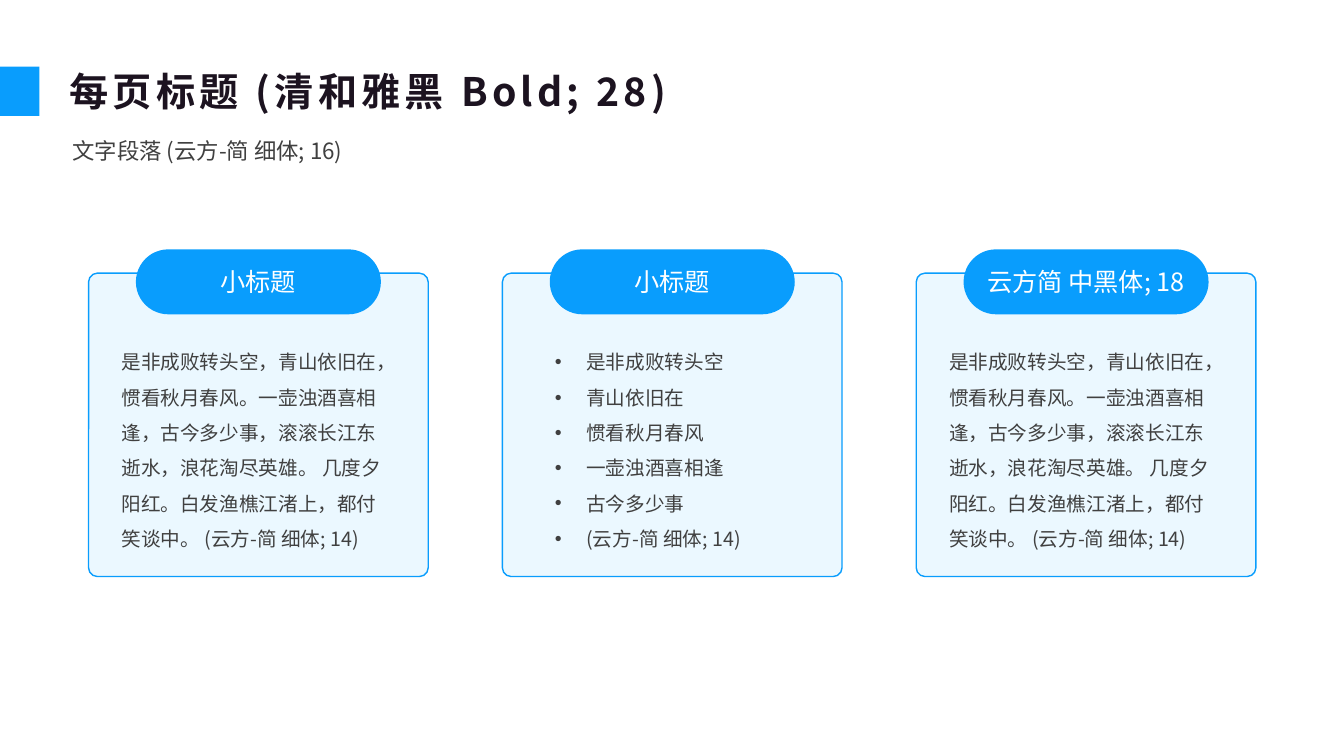
from pptx import Presentation
from pptx.dml.color import RGBColor
from pptx.enum import shapes, text
from pptx.oxml import ns
from pptx.util import Pt
from lxml import etree

COLORS = {"accent": "099DFD", "panel": "D9F3FF", "title": "1C1320",
          "body": "404040", "white": "FFFFFF"}
FONT = "Noto Sans CJK SC"
BODY_INSET = 3.6
BULLET_INDENT = 22.5

POEM = ("是非成败转头空，青山依旧在，惯看秋月春风。一壶浊酒喜相逢，古今多少事，"
        "滚滚长江东逝水，浪花淘尽英雄。 几度夕阳红。白发渔樵江渚上，都付笑谈中。 "
        "(云方-简 细体; 14)")
VERSES = ["是非成败转头空", "青山依旧在", "惯看秋月春风", "一壶浊酒喜相逢",
          "古今多少事", "(云方-简 细体; 14)"]
CARDS = [("小标题", [POEM], False),
         ("小标题", VERSES, True),
         ("云方简 中黑体; 18", [POEM], False)]


def rgb(name):
    return RGBColor.from_string(COLORS[name])


def add_bullet(paragraph):
    props = paragraph._p.get_or_add_pPr()
    props.set("marL", str(Pt(BULLET_INDENT)))
    props.set("indent", str(-Pt(BULLET_INDENT)))
    etree.SubElement(props, ns.qn("a:buFont")).set("typeface", "Arial")
    etree.SubElement(props, ns.qn("a:buChar")).set("char", "•")


def write(shape, lines, size, color, inset, bold=False, bullets=False,
          frame_format=None, line_format=None):
    """Fill a shape's text frame, one paragraph per line."""
    frame = shape.text_frame
    margins = {f"margin_{side}": Pt(inset)
               for side in ("left", "top", "right", "bottom")}
    settings = {"word_wrap": True, **margins, **(frame_format or {})}
    for key, value in settings.items():
        setattr(frame, key, value)
    for index, line in enumerate(lines):
        paragraph = frame.paragraphs[0] if index == 0 else frame.add_paragraph()
        if bullets:
            add_bullet(paragraph)
        for key, value in (line_format or {}).items():
            setattr(paragraph, key, value)
        run = paragraph.add_run()
        run.text = line
        for key, value in {"size": Pt(size), "bold": bold, "name": FONT}.items():
            setattr(run.font, key, value)
        run.font.color.rgb = rgb(color)
        east_asian = etree.SubElement(run._r.get_or_add_rPr(), ns.qn("a:ea"))
        east_asian.set("typeface", FONT)


def add_block(parent, kind, box, fill, line=None, rounding=None):
    block = parent.add_shape(kind, *map(Pt, box))
    block.shadow.inherit = False
    block.fill.solid()
    block.fill.fore_color.rgb = rgb(fill)
    if rounding is not None:
        block.adjustments[0] = rounding
    if line:
        block.line.color.rgb = rgb(line)
        block.line.width = Pt(1)
    else:
        block.line.fill.background()
    return block


def add_body(parent, box, lines, size, bullets=False):
    body = parent.add_textbox(*map(Pt, box))
    write(body, lines, size, "body", BODY_INSET, bullets=bullets,
          frame_format={"auto_size": text.MSO_AUTO_SIZE.SHAPE_TO_FIT_TEXT},
          line_format={"line_spacing": 1.5})


def add_header(slide, left, top, width):
    add_block(slide.shapes, shapes.MSO_SHAPE.RECTANGLE,
              (0, top + 6.5, 28.1, 35.3), "accent")
    title = slide.shapes.title
    place = {"left": left, "top": top, "width": width, "height": 47.5}
    for key, value in place.items():
        setattr(title, key, Pt(value))
    write(title, ["每页标题 (清和雅黑 Bold; 28)"], 28, "title", 1.4, bold=True,
          frame_format={"vertical_anchor": text.MSO_ANCHOR.MIDDLE,
                        "auto_size": text.MSO_AUTO_SIZE.NONE},
          line_format={"alignment": text.PP_ALIGN.LEFT})
    title.text_frame.paragraphs[0].runs[0]._r.get_or_add_rPr().set("spc", "300")
    add_body(slide.shapes, (left, top + 43.9, width, 33.8),
             ["文字段落 (云方-简 细体; 16)"], 16)


def add_card(slide, left, top, width, height, heading, lines, bullets):
    card = slide.shapes.add_group_shape().shapes
    rounded = shapes.MSO_SHAPE.ROUNDED_RECTANGLE
    panel = add_block(card, rounded, (left, top, width, height),
                      "panel", "accent", 0.029)
    panel_color = panel._element.spPr.find(".//" + ns.qn("a:srgbClr"))
    etree.SubElement(panel_color, ns.qn("a:alpha")).set("val", "50000")

    pill_width = 175
    pill_left = left + (width - pill_width) / 2
    pill = add_block(card, rounded, (pill_left, top - 17, pill_width, 46.4),
                     "accent", rounding=0.5)
    write(pill, [heading], 18, "white", BODY_INSET,
          frame_format={"vertical_anchor": text.MSO_ANCHOR.MIDDLE},
          line_format={"alignment": text.PP_ALIGN.CENTER})

    body_width = pill_width if bullets else 203
    body_left = left + (width - body_width) / 2
    add_body(card, (body_left, top + 43.2, body_width, 161), lines, 14, bullets)


def main():
    deck = Presentation()
    deck.slide_width, deck.slide_height = Pt(960), Pt(540)
    slide = deck.slides.add_slide(deck.slide_layouts[5])
    add_header(slide, 48.2, 41, 849)
    first_left, pitch = 63.3, 295.6
    for column, card in enumerate(CARDS):
        add_card(slide, first_left + column * pitch, 195.1, 242.6, 216.7, *card)
    deck.save("out.pptx")


if __name__ == "__main__":
    main()
